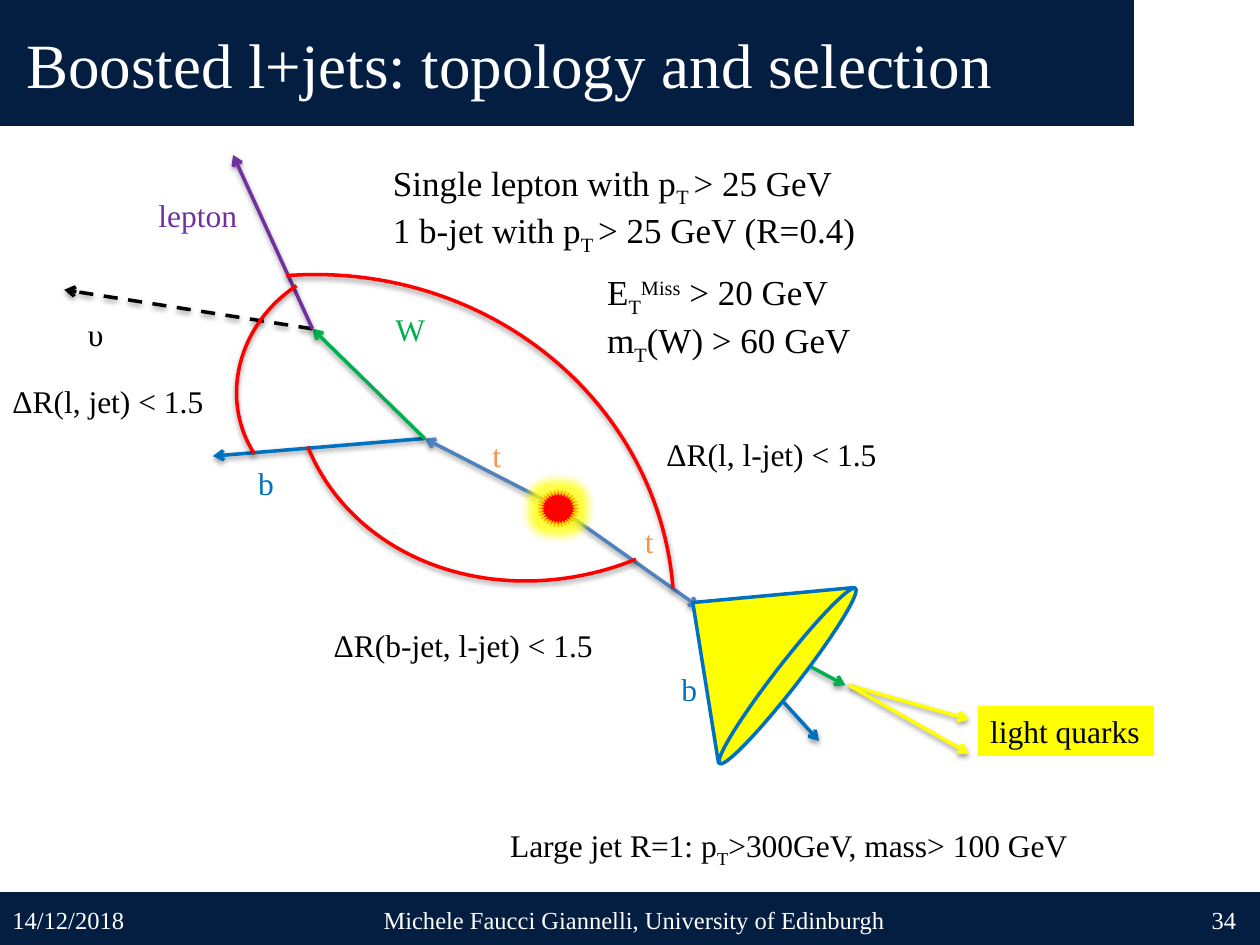
"""Build the boosted l+jets topology slide."""
from dataclasses import dataclass

import lxml.etree
import pptx
import pptx.dml.color
import pptx.enum.dml
import pptx.enum.shapes
import pptx.enum.text
import pptx.oxml
import pptx.oxml.ns
import pptx.util

Inches = pptx.util.Inches
SHAPE = pptx.enum.shapes.MSO_SHAPE
ALIGN = pptx.enum.text.PP_ALIGN
ANCHOR = pptx.enum.text.MSO_ANCHOR
FIT = pptx.enum.text.MSO_AUTO_SIZE
COLORS = {
    "navy": "041E42", "white": "FFFFFF", "black": "000000", "red": "FF0000",
    "gold": "FFC000", "yellow": "FFFF00", "blue": "0070C0", "steel": "4F81BD",
    "green": "00B050", "purple": "7030A0", "orange": "F79646",
}
FONT = "Times New Roman"
SUB, SUPER = -25000, 30000
LINE_WIDTH = 2


@dataclass
class Arrow:
    """A particle track from one point to another."""
    start: tuple[float, float]
    end: tuple[float, float]
    color: str
    dashed: bool = False


@dataclass
class Label:
    """A text box whose paragraphs are lists of strings or (string, baseline)."""
    place: tuple[float, float, float, float]
    paragraphs: list
    color: str = "black"
    size: int = 18
    wrap: bool = False
    align: ALIGN = ALIGN.LEFT
    anchor: ANCHOR = ANCHOR.TOP
    fit: FIT = FIT.SHAPE_TO_FIT_TEXT
    fill: str | None = None


@dataclass
class Figure:
    """A preset shape with optional fill, outline and rotation."""
    kind: SHAPE
    place: tuple[float, float, float, float]
    fill: str | None = None
    line: str | None = None
    width: float = LINE_WIDTH
    rotation: float = 0


def rgb(name: str) -> pptx.dml.color.RGBColor:
    """Return the named colour."""
    return pptx.dml.color.RGBColor.from_string(COLORS[name])


def set_effect(properties, tag: str, color: str, alpha: int, **values: str) -> None:
    """Put one effect into the effect list of the shape properties."""
    name = pptx.oxml.ns.qn
    effects = properties.find(name("a:effectLst"))
    if effects is None:
        effects = lxml.etree.SubElement(properties, name("a:effectLst"))
    effect = lxml.etree.SubElement(effects, name(tag), values)
    tint = lxml.etree.SubElement(effect, name("a:srgbClr"), val=COLORS[color])
    lxml.etree.SubElement(tint, name("a:alpha"), val=str(alpha * 1000))


def add_shadow(properties) -> None:
    """Give a soft shadow below the shape."""
    set_effect(properties, "a:outerShdw", "black", 38, blurRad="40000",
               dist="20000", dir="5400000", rotWithShape="0")


def fill_text(frame, label: Label) -> None:
    """Write the label's paragraphs into a text frame."""
    layout = {"word_wrap": label.wrap, "auto_size": label.fit,
              "vertical_anchor": label.anchor}
    for key, value in layout.items():
        setattr(frame, key, value)
    for index, pieces in enumerate(label.paragraphs):
        para = frame.add_paragraph() if index else frame.paragraphs[0]
        para.alignment = label.align
        for piece in pieces:
            text, baseline = (piece, 0) if isinstance(piece, str) else piece
            span = para.add_run()
            span.text = text
            for key, value in {"name": FONT, "size": pptx.util.Pt(label.size)}.items():
                setattr(span.font, key, value)
            span.font.color.rgb = rgb(label.color)
            if baseline:
                span._r.get_or_add_rPr().set("baseline", str(baseline))


def add_label(page, label: Label) -> None:
    """Draw a text box."""
    box = page.shapes.add_textbox(*map(Inches, label.place))
    if label.fill:
        box.fill.solid()
        box.fill.fore_color.rgb = rgb(label.fill)
    fill_text(box.text_frame, label)


def add_arrow(page, arrow: Arrow) -> None:
    """Draw a track with an open arrowhead at its end."""
    track = page.shapes.add_connector(
        pptx.enum.shapes.MSO_CONNECTOR.STRAIGHT,
        *map(Inches, arrow.start + arrow.end))
    track.line.color.rgb = rgb(arrow.color)
    track.line.width = pptx.util.Pt(LINE_WIDTH)
    if arrow.dashed:
        track.line.dash_style = pptx.enum.dml.MSO_LINE.DASH
    lxml.etree.SubElement(track.line._get_or_add_ln(),
                          pptx.oxml.ns.qn("a:tailEnd"), type="arrow")
    add_shadow(track._element.spPr)


def add_figure(page, figure: Figure):
    """Draw a preset shape and return it."""
    shape = page.shapes.add_shape(figure.kind, *map(Inches, figure.place))
    shape.rotation = figure.rotation
    shape.shadow.inherit = False
    if figure.fill:
        shape.fill.solid()
        shape.fill.fore_color.rgb = rgb(figure.fill)
    else:
        shape.fill.background()
    if figure.line:
        shape.line.color.rgb = rgb(figure.line)
        shape.line.width = pptx.util.Pt(figure.width)
    else:
        shape.line.fill.background()
    return shape


BARS = [Figure(SHAPE.RECTANGLE, (0, 0, 9, 1), "navy"),
        Figure(SHAPE.RECTANGLE, (0, 7.08, 10, 0.42), "navy")]
TITLE = Label((0.11, 0, 9, 1.01), [["Boosted l+jets: topology and selection"]],
              "white", 36, True, anchor=ANCHOR.MIDDLE, fit=FIT.NONE)
TOP_DECAY, W_DECAY, QUARK_DECAY = (3.37, 3.48), (2.48, 2.61), (6.74, 5.44)
TOP_ARROWS = [Arrow((4.49, 4.07), (5.55, 4.82), "steel"),
              Arrow((4.44, 4.03), TOP_DECAY, "steel")]
COLLISION = Figure(SHAPE.STAR_32_POINT, (4.27, 3.89, 0.32, 0.29), "red", "gold", 0.75)
DECAY_ARROWS = [
    Arrow(TOP_DECAY, (1.69, 3.62), "blue"),
    Arrow(TOP_DECAY, W_DECAY, "green"),
    Arrow(W_DECAY, (0.51, 2.3), "black", True),
    Arrow(W_DECAY, (1.85, 1.23), "purple"),
    Arrow((5.52, 4.8), (6.71, 5.44), "green"),
    Arrow((5.53, 4.82), (6.5, 5.88), "blue"),
    Arrow(QUARK_DECAY, (7.69, 5.71), "yellow"),
    Arrow(QUARK_DECAY, (7.69, 5.98), "yellow"),
]
CONE = [
    Figure(SHAPE.ISOSCELES_TRIANGLE, (4.99, 4.6, 1.76, 0.94), "yellow", "blue", rotation=307.8),
    Figure(SHAPE.OVAL, (5.37, 5.27, 1.76, 0.19), "yellow", "blue", rotation=127.8),
]
ARCS = [
    Figure(SHAPE.ARC, (1.93, 2.04, 1.87, 2.02), line="red", rotation=236.8),
    Figure(SHAPE.ARC, (-0.39, 2.18, 5.74, 5.42), line="red", rotation=355.6),
    Figure(SHAPE.ARC, (2.29, 0.96, 4.16, 3.61), line="red", rotation=158),
]
LABELS = [
    Label((0.6, 2.45, 0.33, 0.4), [["υ"]]),
    Label((1.16, 1.51, 0.83, 0.4), [["lepton"]], "purple"),
    Label((1.95, 3.63, 0.34, 0.4), [["b"]], "blue"),
    Label((5.31, 5.27, 0.34, 0.4), [["b"]], "blue"),
    Label((3.04, 2.41, 0.44, 0.4), [["W"]], "green"),
    Label((3.81, 3.41, 0.27, 0.4), [["t"]], "orange"),
    Label((5.02, 4.09, 0.27, 0.4), [["t"]], "orange"),
    Label((3.02, 1.23, 3.92, 0.77),
          [["Single lepton with p", ("T ", SUB), "> 25 GeV"],
           ["1 b-jet with p", ("T ", SUB), "> 25 GeV (R=0.4)"]], size=20),
    Label((4.72, 2.1, 4.54, 0.77),
          [["E", ("T", SUB), ("Miss", SUPER), " > 20 GeV"],
           ["m", ("T", SUB), "(W) > 60 GeV"]], size=20, wrap=True),
    Label((3.95, 6.51, 4.68, 0.4),
          [["Large jet R=1: p", ("T", SUB), ">300GeV, mass> 100 GeV"]]),
    Label((7.76, 5.6, 1.4, 0.4), [["light quarks"]], fill="yellow"),
    Label((0, 2.98, 1.8, 0.4), [["ΔR(l, jet) < 1.5"]]),
    Label((5.19, 3.4, 1.95, 0.4), [["ΔR(l, l-jet) < 1.5"]]),
    Label((2.55, 4.92, 2.34, 0.4), [["ΔR(b-jet, l-jet) < 1.5"]]),
]
FOOTERS = [
    Label((left, 7.1, width, 0.4), [[text]], "white", 14, True, align, ANCHOR.MIDDLE, FIT.NONE)
    for left, width, text, align in [
        (0, 2.33, "14/12/2018", ALIGN.LEFT),
        (2.87, 4.33, "Michele Faucci Giannelli, University of Edinburgh", ALIGN.CENTER),
        (7.58, 2.33, "34", ALIGN.RIGHT)]
]


def main() -> None:
    """Build and save the deck."""
    deck = pptx.Presentation()
    deck.slide_width, deck.slide_height = Inches(10), Inches(7.5)
    page = deck.slides.add_slide(deck.slide_layouts[5])
    title = page.shapes.title
    for key, value in zip(("left", "top", "width", "height"), TITLE.place):
        setattr(title, key, Inches(value))
    fill_text(title.text_frame, TITLE)
    for bar in BARS:
        title._element.addprevious(add_figure(page, bar)._element)
    for arrow in TOP_ARROWS:
        add_arrow(page, arrow)
    star = add_figure(page, COLLISION)
    set_effect(star._element.spPr, "a:glow", "yellow", 75, rad=str(Inches(0.14)))
    for arrow in DECAY_ARROWS:
        add_arrow(page, arrow)
    for figure in CONE:
        add_figure(page, figure)
    for arc in ARCS:
        add_shadow(add_figure(page, arc)._element.spPr)
    for label in LABELS + FOOTERS:
        add_label(page, label)
    deck.save("out.pptx")


if __name__ == "__main__":
    main()
